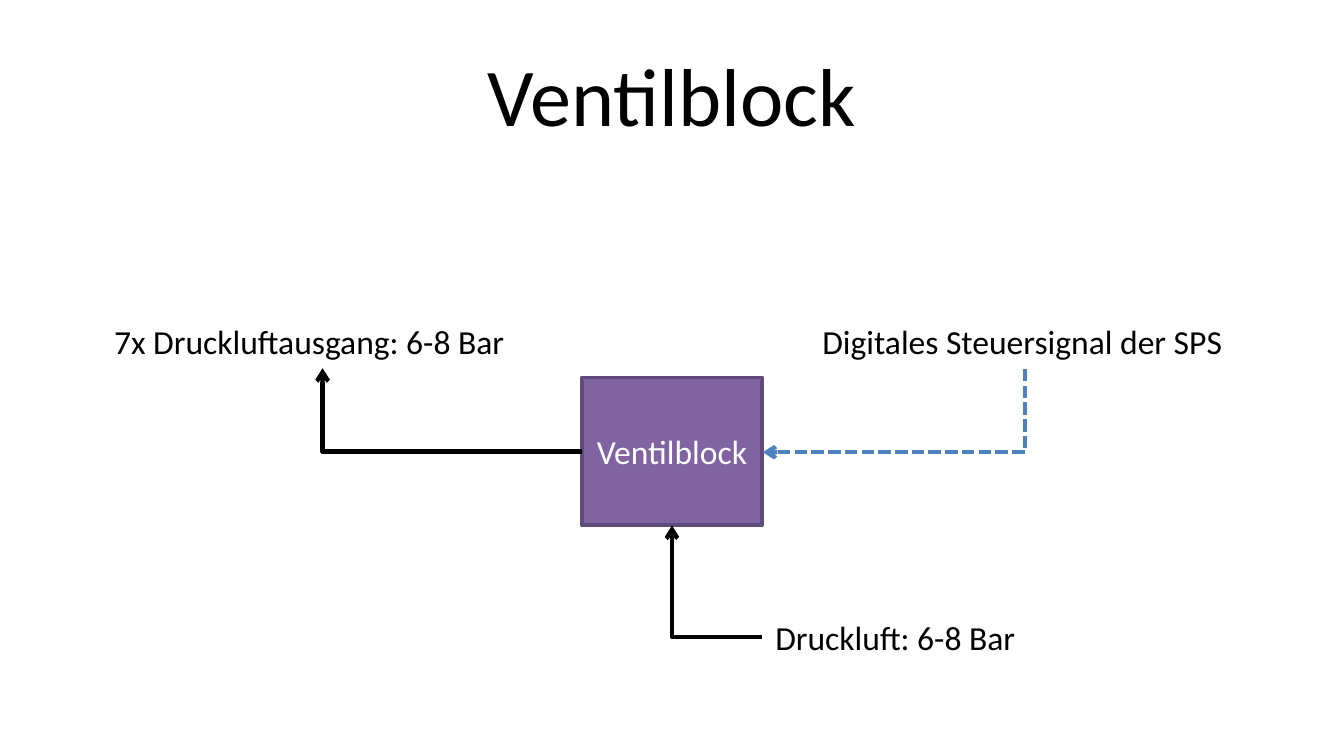
import pptx
import pptx.util
import pptx.dml.color
import pptx.enum.dml
import pptx.enum.shapes
import pptx.enum.text
import pptx.oxml.ns
import lxml.etree

Inches = pptx.util.Inches
Align = pptx.enum.text.PP_ALIGN
Anchor = pptx.enum.text.MSO_ANCHOR
Dash = pptx.enum.dml.MSO_LINE
qn = pptx.oxml.ns.qn


def tint(hue):
    """Turn a hex string into a colour."""
    return pptx.dml.color.RGBColor.from_string(hue)


def write(shape, text, size, hue, align, anchor, wrap=True):
    frame = shape.text_frame
    frame.word_wrap = wrap
    frame.vertical_anchor = anchor
    par = frame.paragraphs[0]
    par.alignment = align
    run = par.add_run()
    run.text = text
    look = {"name": "Calibri", "size": pptx.util.Pt(size), "bold": False}
    for key, value in look.items():
        setattr(run.font, key, value)
    run.font.color.rgb = tint(hue)


# Widescreen, 16:9
deck = pptx.Presentation()
deck.slide_width = Inches(10)
deck.slide_height = Inches(10 * 9 / 16)
slide = deck.slides.add_slide(deck.slide_layouts[5])
shapes = slide.shapes

# Title
title = shapes.title
place = {"left": 0.5, "top": 0.23, "width": 9, "height": 0.94}
for key, value in place.items():
    setattr(title, key, Inches(value))
write(title, "Ventilblock", 44, "000000", Align.CENTER, Anchor.MIDDLE)

# Valve block
block = shapes.add_shape(
    pptx.enum.shapes.MSO_SHAPE.RECTANGLE,
    Inches(4.33), Inches(2.81), Inches(1.34), Inches(1.1))
block.shadow.inherit = False
block.fill.solid()
block.fill.fore_color.rgb = tint("8064A2")
block.line.color.rgb = tint("5F4A78")
block.line.width = pptx.util.Pt(2)
write(block, "Ventilblock", 18, "FFFFFF", Align.CENTER, Anchor.MIDDLE)

# Labels: text, left, top, width, wrap
labels = [
    ("7x Druckluftausgang: 6-8 Bar", 0.75, 2.34, 3.31, True),
    ("Digitales Steuersignal der SPS", 6.02, 2.34, 3.21, False),
    ("Druckluft: 6-8 Bar", 5.67, 4.54, 3.31, True),
]
for text, left, top, width, wrap in labels:
    box = shapes.add_textbox(
        Inches(left), Inches(top), Inches(width), Inches(0.4))
    write(box, text, 18, "000000", Align.LEFT, Anchor.TOP, wrap)

# One-bend arrows: left, top, width, height before turning; turn in degrees
arrows = [
    (2.4, 2.74, 1.93, 0.62, 180, "000000", Dash.SOLID),
    (6.34, 2.08, 0.62, 1.95, 90, "4F81BD", Dash.SQUARE_DOT),
    (5, 3.91, 0.67, 0.83, 180, "000000", Dash.SOLID),
]
for left, top, width, height, turn, hue, dash in arrows:
    arrow = shapes.add_connector(
        pptx.enum.shapes.MSO_CONNECTOR.ELBOW, Inches(left), Inches(top),
        Inches(left + width), Inches(top + height))
    arrow.line.color.rgb = tint(hue)
    arrow.line.width = pptx.util.Pt(2.25)
    arrow.line.dash_style = dash
    props = arrow.element.spPr
    props.find(qn("a:xfrm")).set("rot", str(turn * 60000))
    props.find(qn("a:prstGeom")).set("prst", "bentConnector2")
    tail = lxml.etree.SubElement(props.find(qn("a:ln")), qn("a:tailEnd"))
    tail.set("type", "arrow")
    lxml.etree.SubElement(props, qn("a:effectLst"))

deck.save("out.pptx")
